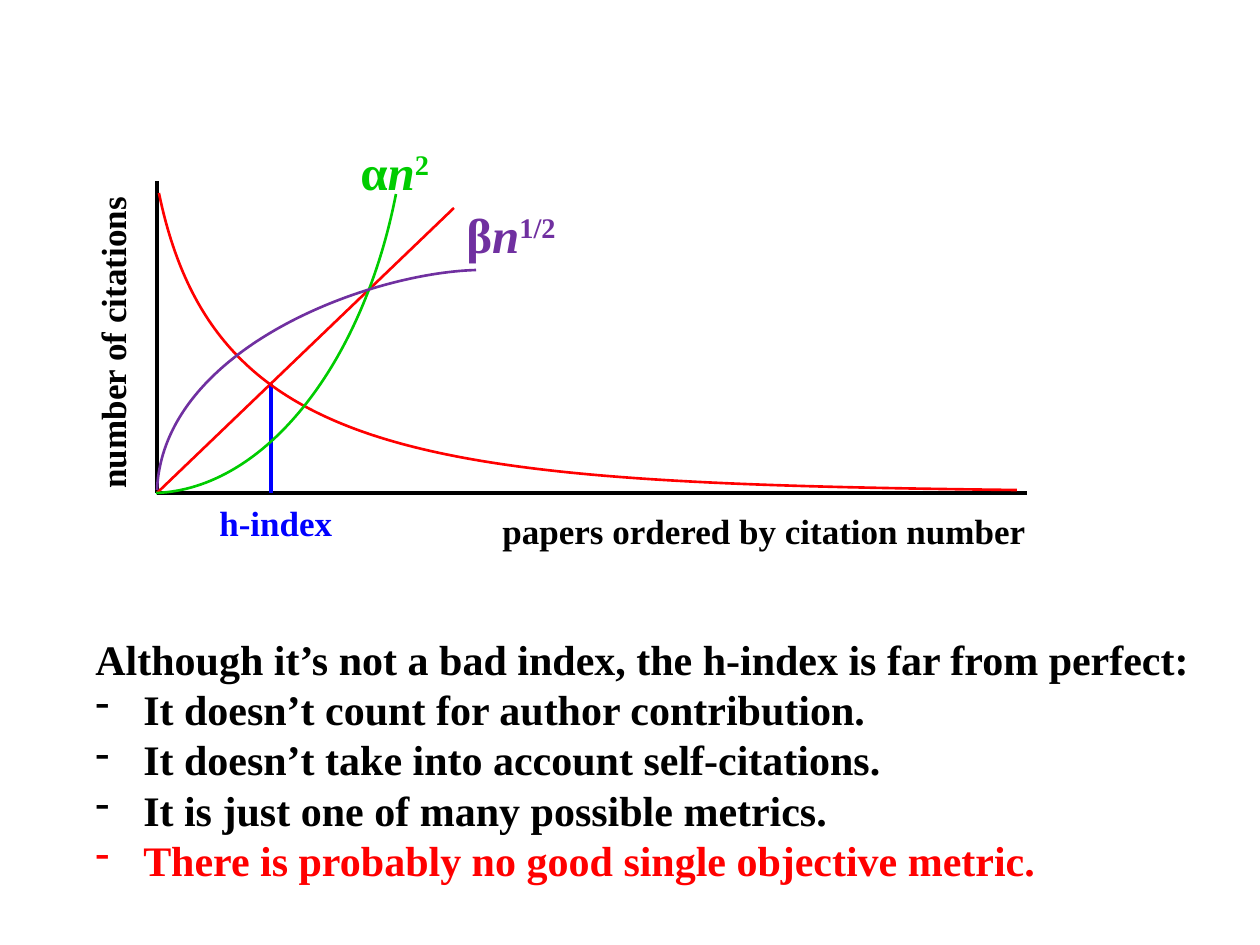
"""Build a slide that explains the h-index with a citation curve and lists its flaws."""
from lxml.etree import SubElement
from pptx import Presentation
from pptx.dml.color import RGBColor
from pptx.enum.shapes import MSO_CONNECTOR
from pptx.enum.text import MSO_AUTO_SIZE
from pptx.oxml.ns import qn
from pptx.util import Emu, Inches, Pt

PX = Inches(1) // 126
FONT = "Times New Roman"
COLORS = {"black": "000000", "red": "FF0000", "blue": "0000FF",
          "green": "00CC00", "purple": "7030A0"}

ORIGIN = (157, 493)
CROSSING = (271, 384)
AXES = [((157, 181), ORIGIN), (ORIGIN, (1027, 493))]
GUIDES = [(ORIGIN, (454, 208), "red", 1.5),
          (CROSSING, (CROSSING[0], ORIGIN[1]), "blue", 2.25)]
CURVES = [
    ("red", [(1017, 490), (433, 483), (215, 464), (159, 193)]),
    ("green", [(396, 194), (363, 364), (265, 489), (156, 493)]),
    ("purple", [(157, 490), (163, 349), (368, 273), (476, 270)]),
]
LABELS = [
    ((490, 503, 552, 55), 0, 20, "black", [("papers ordered by citation number", "")]),
    ((-47, 314, 319, 55), 270, 20, "black", [("number of citations", "")]),
    ((207, 495, 139, 55), 0, 20, "blue", [("h-index", "")]),
    ((348, 135, 101, 72), 0, 28, "green", [("α", ""), ("n", "italic"), ("2", "super")]),
    ((454, 198, 122, 72), 0, 28, "purple", [("β", ""), ("n", "italic"), ("1/2", "super")]),
]
VERDICT_BOX = (83, 627, 1130, 267)
VERDICT = "Although it’s not a bad index, the h-index is far from perfect:"
FLAWS = [
    ("It doesn’t count for author contribution.", "black"),
    ("It doesn’t take into account self-citations.", "black"),
    ("It is just one of many possible metrics.", "black"),
    ("There is probably no good single objective metric.", "red"),
]


def px(*lengths):
    return [Emu(length * PX) for length in lengths]


def color(name):
    return RGBColor.from_string(COLORS[name])


def add_line(shapes, start, end, hue, width):
    line = shapes.add_connector(MSO_CONNECTOR.STRAIGHT, *px(*start, *end))
    line.line.color.rgb = color(hue)
    line.line.width = Pt(width)
    SubElement(line._element.spPr, qn("a:effectLst"))


def add_curve(shapes, hue, points):
    builder = shapes.build_freeform(*points[0], scale=PX)
    builder.add_line_segments(points[1:], close=False)
    curve = builder.convert_to_shape()
    curve.fill.background()
    curve.line.color.rgb = color(hue)
    curve.line.width = Pt(1.5)
    curve.shadow.inherit = False
    outline = curve._element.find(".//" + qn("a:path"))
    bezier = SubElement(outline, qn("a:cubicBezTo"))
    for segment in outline.findall(qn("a:lnTo")):
        bezier.append(segment[0])
        outline.remove(segment)


def add_text_frame(shapes, box, rotation=0):
    label = shapes.add_textbox(*px(*box))
    label.rotation = rotation
    frame = label.text_frame
    frame.word_wrap = False
    frame.auto_size = MSO_AUTO_SIZE.SHAPE_TO_FIT_TEXT
    return frame


def add_run(paragraph, words, size, hue, style=""):
    run = paragraph.add_run()
    run.text = words
    font = run.font
    font.name, font.size, font.bold = FONT, Pt(size), True
    font.color.rgb = color(hue)
    if style == "italic":
        font.italic = True
    elif style == "super":
        font._element.set("baseline", "30000")


def add_dash(paragraph):
    properties = paragraph._p.get_or_add_pPr()
    properties.set("marL", str(Inches(0.38)))
    properties.set("indent", str(-Inches(0.38)))
    SubElement(properties, qn("a:buFontTx"))
    SubElement(properties, qn("a:buChar"), char="-")


def main():
    deck = Presentation()
    deck.slide_width, deck.slide_height = Inches(10), Inches(7.5)
    shapes = deck.slides.add_slide(deck.slide_layouts[6]).shapes

    axes = shapes.add_group_shape()
    for start, end in AXES:
        add_line(axes.shapes, start, end, "black", 2.25)
    for guide in GUIDES:
        add_line(shapes, *guide)
    for hue, points in CURVES:
        add_curve(shapes, hue, points)

    for box, rotation, size, hue, parts in LABELS:
        paragraph = add_text_frame(shapes, box, rotation).paragraphs[0]
        for words, style in parts:
            add_run(paragraph, words, size, hue, style)

    verdict = add_text_frame(shapes, VERDICT_BOX)
    add_run(verdict.paragraphs[0], VERDICT, 24, "black")
    for flaw, hue in FLAWS:
        paragraph = verdict.add_paragraph()
        add_dash(paragraph)
        add_run(paragraph, flaw, 24, hue)

    deck.save("out.pptx")


if __name__ == "__main__":
    main()
